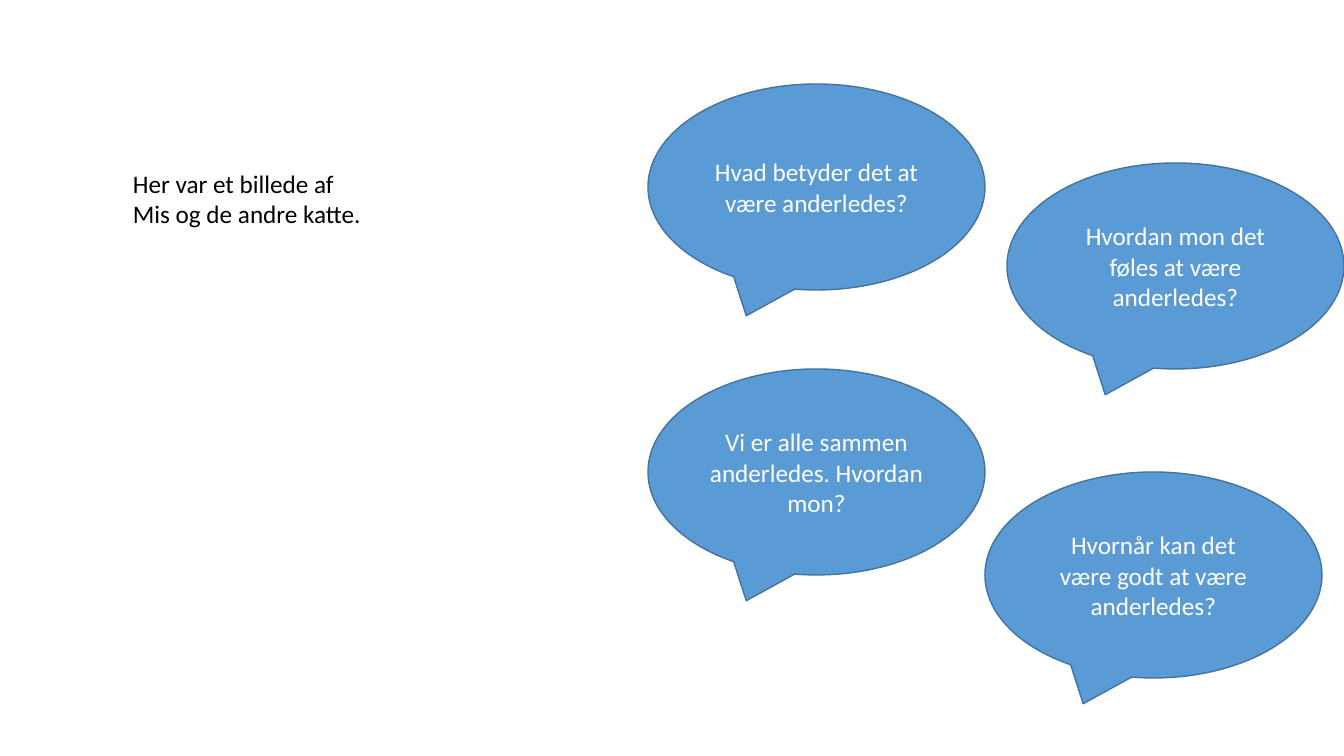
"""Build a slide with a caption and four speech bubbles about being different."""
import pptx
import pptx.dml.color
import pptx.enum.shapes
import pptx.enum.text
import pptx.util
from dataclasses import dataclass

BUBBLES = [
    ("Hvad betyder det at være anderledes?", 648, 84),
    ("Hvordan mon det føles at være anderledes?", 1007, 163),
    ("Vi er alle sammen anderledes. Hvordan mon?", 648, 369),
    ("Hvornår kan det være godt at være anderledes?", 985, 472),
]
BUBBLE_SIZE = (337, 206)
CAPTION = "Her var et billede af Mis og de andre katte."
CAPTION_AREA = (123, 163, 250, 72)
PAGE_SIZE = (1344, 756)


@dataclass(frozen=True)
class Theme:
    font: str = "Calibri"
    size: int = 18
    outline_width: int = 1
    fill: str = "5B9BD5"
    outline: str = "43739E"
    light: str = "FFFFFF"
    dark: str = "000000"


THEME = Theme()


def px(length):
    return pptx.util.Emu(round(length * 914400 / 100.8))


def color(code):
    return pptx.dml.color.RGBColor.from_string(code)


def write(shape, text, *, ink, align, anchor):
    frame = shape.text_frame
    frame.word_wrap = True
    frame.vertical_anchor = anchor
    para = frame.paragraphs[0]
    para.alignment = align
    span = para.add_run()
    span.text = text
    span.font.name = THEME.font
    span.font.size = pptx.util.Pt(THEME.size)
    span.font.color.rgb = color(ink)


def add_bubble(page, text, left, top):
    bubble = page.shapes.add_shape(
        pptx.enum.shapes.MSO_SHAPE.OVAL_CALLOUT,
        *map(px, (left, top, *BUBBLE_SIZE)),
    )
    bubble.shadow.inherit = False
    bubble.fill.solid()
    bubble.fill.fore_color.rgb = color(THEME.fill)
    bubble.line.color.rgb = color(THEME.outline)
    bubble.line.width = pptx.util.Pt(THEME.outline_width)
    write(bubble, text, ink=THEME.light,
          align=pptx.enum.text.PP_ALIGN.CENTER,
          anchor=pptx.enum.text.MSO_ANCHOR.MIDDLE)


def add_caption(page):
    box = page.shapes.add_textbox(*map(px, CAPTION_AREA))
    write(box, CAPTION, ink=THEME.dark,
          align=pptx.enum.text.PP_ALIGN.LEFT,
          anchor=pptx.enum.text.MSO_ANCHOR.TOP)
    box.text_frame.auto_size = pptx.enum.text.MSO_AUTO_SIZE.SHAPE_TO_FIT_TEXT


def main():
    deck = pptx.Presentation()
    deck.slide_width, deck.slide_height = map(px, PAGE_SIZE)
    page = deck.slides.add_slide(deck.slide_layouts[6])
    for text, left, top in BUBBLES:
        add_bubble(page, text, left, top)
    add_caption(page)
    deck.save("out.pptx")


if __name__ == "__main__":
    main()
